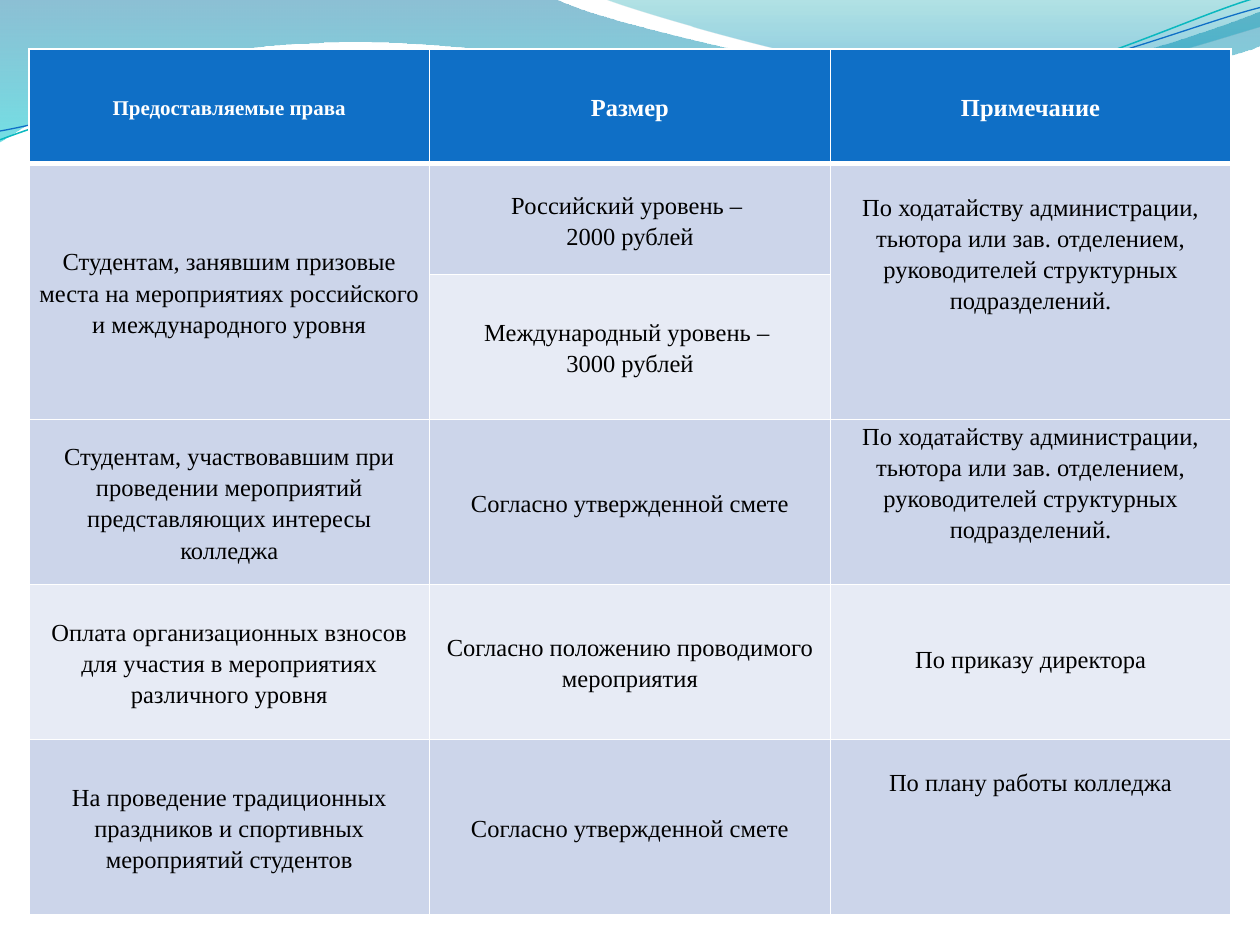
from pptx import Presentation
from pptx.dml.color import RGBColor
from pptx.enum import text as t
from pptx.oxml import parse_xml
from pptx.oxml.ns import nsdecls
from pptx.util import Inches, Pt

HUE = {"head": "0F6FC6", "dark": "CCD5EA", "light": "E7EBF5", "white": "FFFFFF",
       "black": "000000", "teal": "0AB8BF"}
FONT = "Times New Roman"

HEADS = [("Предоставляемые права", 12), ("Размер", 14), ("Примечание", 14)]
ASK = ("По ходатайству администрации, тьютора или зав. отделением, "
       "руководителей структурных подразделений.")
COST = "Согласно утвержденной смете"
ROWS = [
    ("Студентам, занявшим призовые места на мероприятиях российского и международного уровня",
     "Российский уровень – \n2000 рублей", ASK),
    (None, "Международный уровень – \n3000 рублей", None),
    ("Студентам, участвовавшим при проведении мероприятий представляющих интересы колледжа",
     COST, ASK),
    ("Оплата организационных взносов для участия в мероприятиях различного уровня",
     "Согласно положению проводимого мероприятия", "По приказу директора"),
    ("На проведение традиционных праздников и спортивных мероприятий студентов",
     COST, "По плану работы колледжа"),
]
TONES = ["dark", "light", "dark", "light", "dark"]
NOTE_TOPS = [0.21, 0, 0, 0.46, 0.21]  # top inset of the notes column
HEIGHTS = [0.91, 0.88, 1.15, 1.31, 1.23, 1.39]
COL = 3.18

# A pair is a straight step; six numbers are a Bezier curve.
# Gradient stops: position %, colour, opacity %.
WAVES = [
    ([(0, 0), (4.4, -0.01), (4.76, 0.17, 6.64, 0.63, 7.58, 0.63),
      (8.53, 0.63, 9.58, 0.26, 10, 0.09), (10.01, 0.36),
      (9.83, 0.44, 8.7, 0.76, 7.46, 0.75), (6.22, 0.75, 3.82, 0.28, 2.57, 0.34),
      (1.29, 0.36, 0.46, 0.83, -0.01, 1.13), (0, 0)],
     [(0, "0074A1", 45), (100, "00C6CF", 55)]),
    ([(4.79, -0.01), (5.09, 0.11, 6.82, 0.62, 7.69, 0.65),
      (8.56, 0.69, 9.61, 0.32, 10, 0.21), (10, 0), (4.79, -0.01)],
     [(0, "00A1A9", 30), (80, "008BBF", 45)]),
]
LINES = [
    ([(0, 1.11), (0.48, 0.93, 1.58, 0.57, 2.77, 0.52),
      (3.95, 0.47, 5.93, 0.89, 7.13, 0.8), (8.33, 0.71, 9.38, 0.15, 9.98, -0.02)],
     "teal", 0.85),
    ([(0, 1.04), (0.47, 0.96, 1.64, 0.61, 2.83, 0.56),
      (4.03, 0.51, 5.97, 0.84, 7.17, 0.75), (8.36, 0.67, 9.41, 0.21, 10, 0.06)],
     "head", 0.75),
]


def rgb(name):
    return RGBColor.from_string(HUE[name])


def outline(shapes, steps, close):
    """Draw all points as straight steps, then join each triple into a curve."""
    pts = [(Inches(s[i]), Inches(s[i + 1])) for s in steps for i in range(0, len(s), 2)]
    pen = shapes.build_freeform(*pts[0])
    pen.add_line_segments(pts[1:], close=close)
    shape = pen.convert_to_shape()
    legs = iter(shape.element.spPr.findall(".//{*}lnTo"))
    for step in steps[1:]:
        leg = next(legs)
        if len(step) == 6:
            curve = parse_xml(f'<a:cubicBezTo {nsdecls("a")}/>')
            leg.addprevious(curve)
            for part in (leg, next(legs), next(legs)):
                curve.append(part[0])
                part.getparent().remove(part)
    shape.shadow.inherit = False
    shape.fill.background()
    return shape


def add_wave(shapes, steps, stops):
    shape = outline(shapes, steps, True)
    shape.line.fill.background()
    marks = "".join(
        f'<a:gs pos="{pos * 1000}"><a:srgbClr val="{hue}">'
        f'<a:alpha val="{alpha * 1000}"/></a:srgbClr></a:gs>' for pos, hue, alpha in stops)
    grad = parse_xml(f'<a:gradFill {nsdecls("a")} rotWithShape="1"><a:gsLst>{marks}</a:gsLst>'
                     '<a:lin ang="5400000" scaled="0"/></a:gradFill>')
    props = shape.element.spPr
    props.replace(props.find("{*}noFill"), grad)


def add_line(shapes, steps, hue, width):
    shape = outline(shapes, steps, False)
    shape.line.color.rgb = rgb(hue)
    shape.line.width = Pt(width)


def set_cell(cell, words, tone, size=14, head=False, top=None):
    """Fill one cell; a top inset anchors its text at the top."""
    cell.text = words
    cell.margin_left = cell.margin_right = Inches(0.07)
    cell.margin_top, cell.margin_bottom = Inches(top or 0), 0
    cell.vertical_anchor = t.MSO_ANCHOR.MIDDLE if top is None else t.MSO_ANCHOR.TOP
    for para in cell.text_frame.paragraphs:
        para.alignment = t.PP_ALIGN.CENTER
        para.line_spacing = 1.15
        for run in para.runs:
            run.font.name, run.font.size, run.font.bold = FONT, Pt(size), head
            run.font.color.rgb = rgb("white" if head else "black")
    paint(cell, tone)
    if head:
        edge(cell)


def paint(cell, tone):
    cell.fill.solid()
    cell.fill.fore_color.rgb = rgb(tone)


def edge(cell):
    """Give a heading cell white borders with a thick base."""
    props = cell._tc.get_or_add_tcPr()
    for i, (side, width) in enumerate([("L", 1), ("R", 1), ("T", 1), ("B", 3)]):
        props.insert(i, parse_xml(
            f'<a:ln{side} {nsdecls("a")} w="{Pt(width)}"><a:solidFill>'
            f'<a:srgbClr val="{HUE["white"]}"/></a:solidFill></a:ln{side}>'))


def add_rights(shapes):
    table = shapes.add_table(len(HEIGHTS), len(HEADS), Inches(0.23), Inches(0.39),
                             Inches(COL * len(HEADS)), Inches(sum(HEIGHTS))).table
    for col in table.columns:
        col.width = Inches(COL)
    for row, high in zip(table.rows, HEIGHTS):
        row.height = Inches(high)
    for c, (words, size) in enumerate(HEADS):
        set_cell(table.cell(0, c), words, "head", size, head=True)
    for r, (row, tone, top) in enumerate(zip(ROWS, TONES, NOTE_TOPS), 1):
        for c, words in enumerate(row):
            cell = table.cell(r, c)
            if words is None:
                paint(cell, tone)
                table.cell(r - 1, c).merge(cell)
            else:
                set_cell(cell, words, tone, top=top if c == 2 else None)


def main():
    prs = Presentation()
    prs.slide_width, prs.slide_height = Inches(10), Inches(7.5)
    shapes = prs.slides.add_slide(prs.slide_layouts[6]).shapes
    for wave in WAVES:
        add_wave(shapes, *wave)
    for line in LINES:
        add_line(shapes, *line)
    add_rights(shapes)
    prs.save("out.pptx")


if __name__ == "__main__":
    main()
